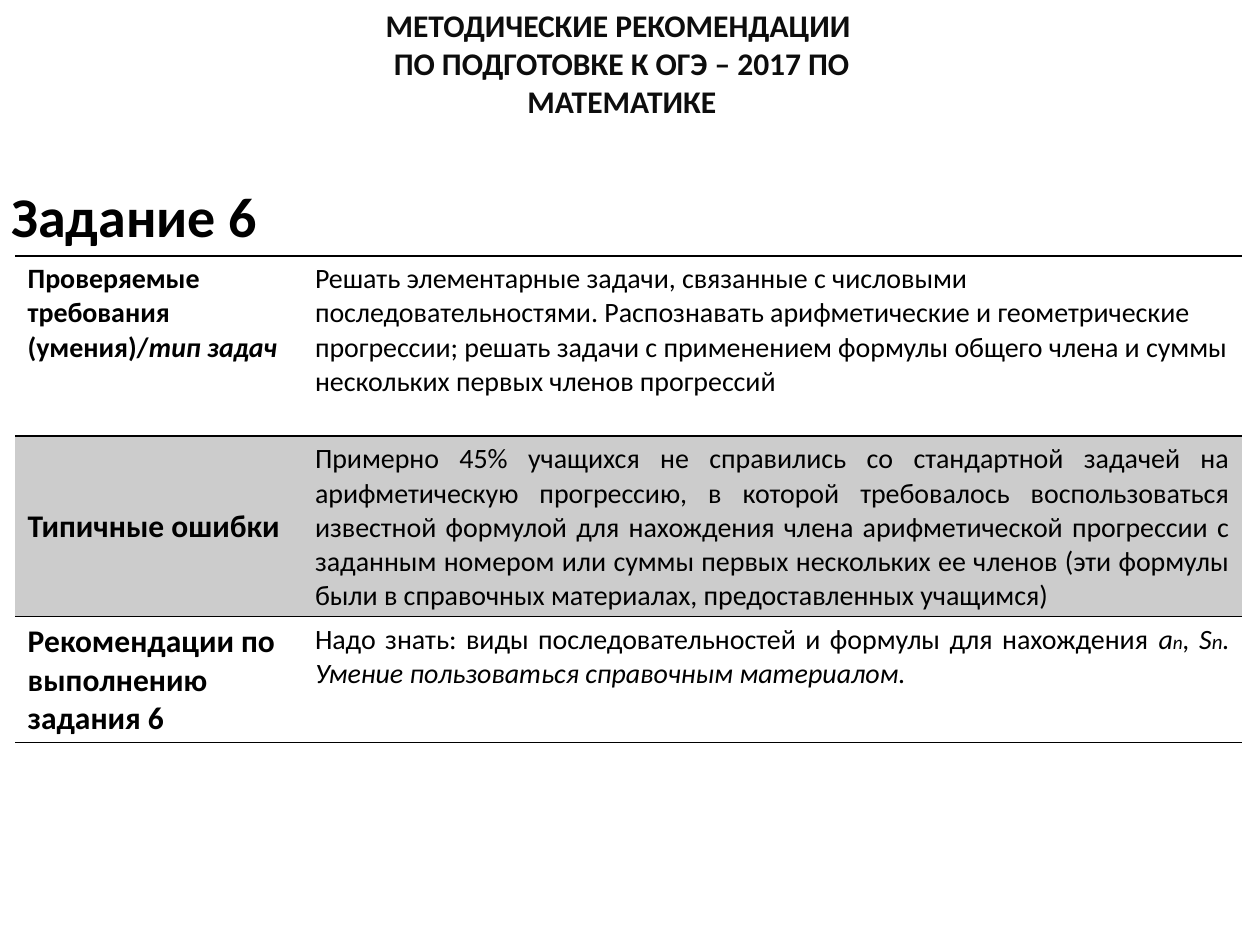
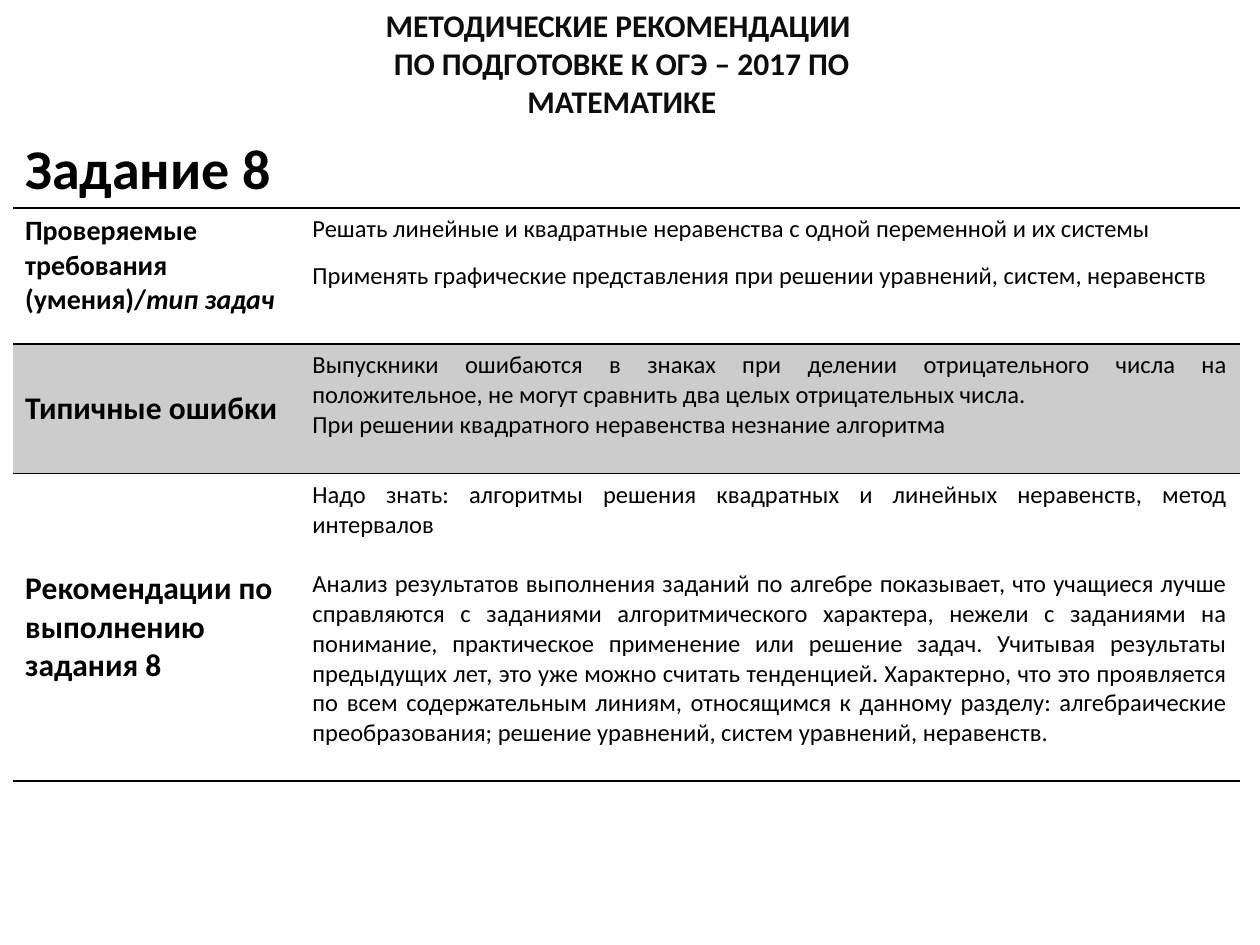
from dataclasses import dataclass

from lxml.etree import SubElement
from pptx import Presentation
from pptx.dml.color import RGBColor
from pptx.enum.text import MSO_ANCHOR, MSO_AUTO_SIZE, PP_ALIGN
from pptx.oxml.ns import qn
from pptx.util import Inches, Pt

HUES = {"ink": "000000", "head": "0D0D0D", "band": "CCCCCC"}
FONT = "Calibri"
GRID = Inches(0.1)
COLS, ROWS = 100, 75
WIDTHS = (22.8, 74.6)
PLAIN = "{2D5ABB26-0587-4C30-8999-92F81FD0307C}"
LEFT, MID, JUST = PP_ALIGN.LEFT, PP_ALIGN.CENTER, PP_ALIGN.JUSTIFY


@dataclass(frozen=True)
class Run:
    """Hold a piece of text with its look."""
    text: str
    size: float = 16
    bold: bool = False
    slant: bool = False
    hue: str = "ink"


@dataclass(frozen=True)
class Para:
    """Hold runs with alignment and spacing in points."""
    runs: tuple[Run, ...]
    align: PP_ALIGN = LEFT
    before: float = 0
    after: float = 0


@dataclass(frozen=True)
class Task:
    """Hold one exam task, with places in grid columns and rows."""
    num: int
    title: tuple[float, float]
    table: tuple[float, float]
    highs: tuple[float, float, float]
    skills: tuple[Para, ...]
    faults: tuple[Para, ...]
    advice: tuple[Para, ...]


def line(text: str, size: float, align: PP_ALIGN = LEFT, before: float = 0, after: float = 0) -> Para:
    """Make a paragraph of one plain run."""
    return Para((Run(text, size),), align, before, after)


HEAD = tuple(Para((Run(text, 18, True, hue="head"),), MID) for text in (
    "МЕТОДИЧЕСКИЕ РЕКОМЕНДАЦИИ ",
    "ПО ПОДГОТОВКЕ К ОГЭ – 2017 ПО МАТЕМАТИКЕ",
))

TASKS = (
    Task(
        6, (-0.1, 13.9), (1.2, 20.3), (14.3, 14.3, 10),
        (line("Решать элементарные задачи, связанные с числовыми последовательностями. "
              "Распознавать арифметические и геометрические прогрессии; решать задачи с "
              "применением формулы общего члена и суммы нескольких первых членов прогрессий", 16),),
        (line("Примерно 45% учащихся не справились со стандартной задачей на арифметическую "
              "прогрессию, в которой требовалось воспользоваться известной формулой для "
              "нахождения члена арифметической прогрессии с заданным номером или суммы первых "
              "нескольких ее членов (эти формулы были в справочных материалах, "
              "предоставленных учащимся)", 16, JUST),),
        (Para((
            Run("Надо знать: виды последовательностей и формулы для нахождения "),
            Run("а", slant=True),
            Run("n", 11, slant=True),
            Run(", S", slant=True),
            Run("n", 12, slant=True),
            Run(". Умение пользоваться справочным материалом.", slant=True),
        ), JUST),),
    ),
    Task(
        8, (1, 10.1), (1, 16.5), (10.8, 10.3, 24.4),
        (line("Решать линейные и квадратные неравенства с одной переменной и их системы", 14, after=10),
         line("Применять графические представления при решении уравнений, систем, неравенств", 14, after=10)),
        (line("Выпускники ошибаются в знаках при делении отрицательного числа на положительное, "
              "не могут сравнить два целых отрицательных числа.", 14, JUST),
         line("При решении квадратного неравенства незнание алгоритма", 14, JUST)),
        (line("Надо знать: алгоритмы решения квадратных и линейных неравенств, метод интервалов", 14, JUST),
         line("Анализ результатов выполнения заданий по алгебре показывает, что учащиеся лучше "
              "справляются с заданиями алгоритмического характера, нежели с заданиями на "
              "понимание, практическое применение или решение задач. Учитывая результаты "
              "предыдущих лет, это уже можно считать тенденцией. Характерно, что это проявляется "
              "по всем содержательным линиям, относящимся к данному разделу: алгебраические "
              "преобразования; решение уравнений, систем уравнений, неравенств.", 14, JUST, before=17)),
    ),
)


def span(cells: float) -> int:
    """Turn grid cells into a length."""
    return int(cells * GRID)


def write(frame, paras: tuple[Para, ...]) -> None:
    """Fill a text frame run by run."""
    for at, para in enumerate(paras):
        spot = frame.add_paragraph() if at else frame.paragraphs[0]
        spot.alignment = para.align
        spot.space_before, spot.space_after = Pt(para.before), Pt(para.after)
        for run in para.runs:
            bit = spot.add_run()
            bit.text = run.text
            font = bit.font
            font.name, font.size = FONT, Pt(run.size)
            font.bold, font.italic = run.bold, run.slant
            font.color.rgb = RGBColor.from_string(HUES[run.hue])


def rule(cell, side: str) -> None:
    """Draw a thin line on one side of a cell."""
    edge = SubElement(cell._tc.get_or_add_tcPr(), qn(f"a:{side}"), w=str(Pt(1)))
    fill = SubElement(edge, qn("a:solidFill"))
    SubElement(fill, qn("a:srgbClr"), val=HUES["ink"])


def label(text: str) -> tuple[Para, ...]:
    """Make a bold row label."""
    return (Para((Run(text, 18, True),)),)


def chart_rows(task: Task) -> tuple:
    """List the label and text of each table row."""
    skill = Para((Run("Проверяемые требования (умения)/", bold=True),
                  Run("тип задач", bold=True, slant=True)))
    return (
        ((skill,), task.skills),
        (label("Типичные ошибки"), task.faults),
        (label(f"Рекомендации по выполнению задания {task.num}"), task.advice),
    )


def add_grid(slide, task: Task) -> None:
    """Add the table of skills, faults and advice."""
    left, top = map(span, task.table)
    table = slide.shapes.add_table(
        len(task.highs), len(WIDTHS), left, top, span(sum(WIDTHS)), span(sum(task.highs))).table
    table.first_row = table.horz_banding = False
    table._tbl.tblPr.find(qn("a:tableStyleId")).text = PLAIN
    for col, wide in zip(table.columns, WIDTHS):
        col.width = span(wide)
    sides = (("lnT", "lnB"), ("lnT",), ("lnB",))
    for row, (high, texts) in enumerate(zip(task.highs, chart_rows(task))):
        table.rows[row].height = span(high)
        for col, paras in enumerate(texts):
            cell = table.cell(row, col)
            write(cell.text_frame, paras)
            for side in sides[row]:
                rule(cell, side)
            if row == 1:
                cell.fill.solid()
                cell.fill.fore_color.rgb = RGBColor.from_string(HUES["band"])
            else:
                cell.fill.background()
            if row and not col:
                cell.vertical_anchor = MSO_ANCHOR.MIDDLE


def set_text(shape, paras: tuple[Para, ...], wrap: bool) -> None:
    """Write into a box that grows with its text."""
    frame = shape.text_frame
    frame.word_wrap = wrap
    frame.auto_size = MSO_AUTO_SIZE.SHAPE_TO_FIT_TEXT
    frame.vertical_anchor = MSO_ANCHOR.TOP
    write(frame, paras)


def add_task(deck, task: Task) -> None:
    """Build the slide of one task."""
    slide = deck.slides.add_slide(deck.slide_layouts[5])
    title = slide.shapes.title
    title.left, title.top = map(span, task.title)
    title.width, title.height = span(21.7), span(6.4)
    set_text(title, (Para((Run(f"Задание {task.num}", 32, True),)),), False)
    add_grid(slide, task)
    head = slide.shapes.add_textbox(span(22.6), 0, span(53.5), span(10.1))
    set_text(head, HEAD, True)


def main() -> None:
    """Build and save the deck."""
    deck = Presentation()
    deck.slide_width, deck.slide_height = span(COLS), span(ROWS)
    for task in TASKS:
        add_task(deck, task)
    deck.save("out.pptx")


if __name__ == "__main__":
    main()
